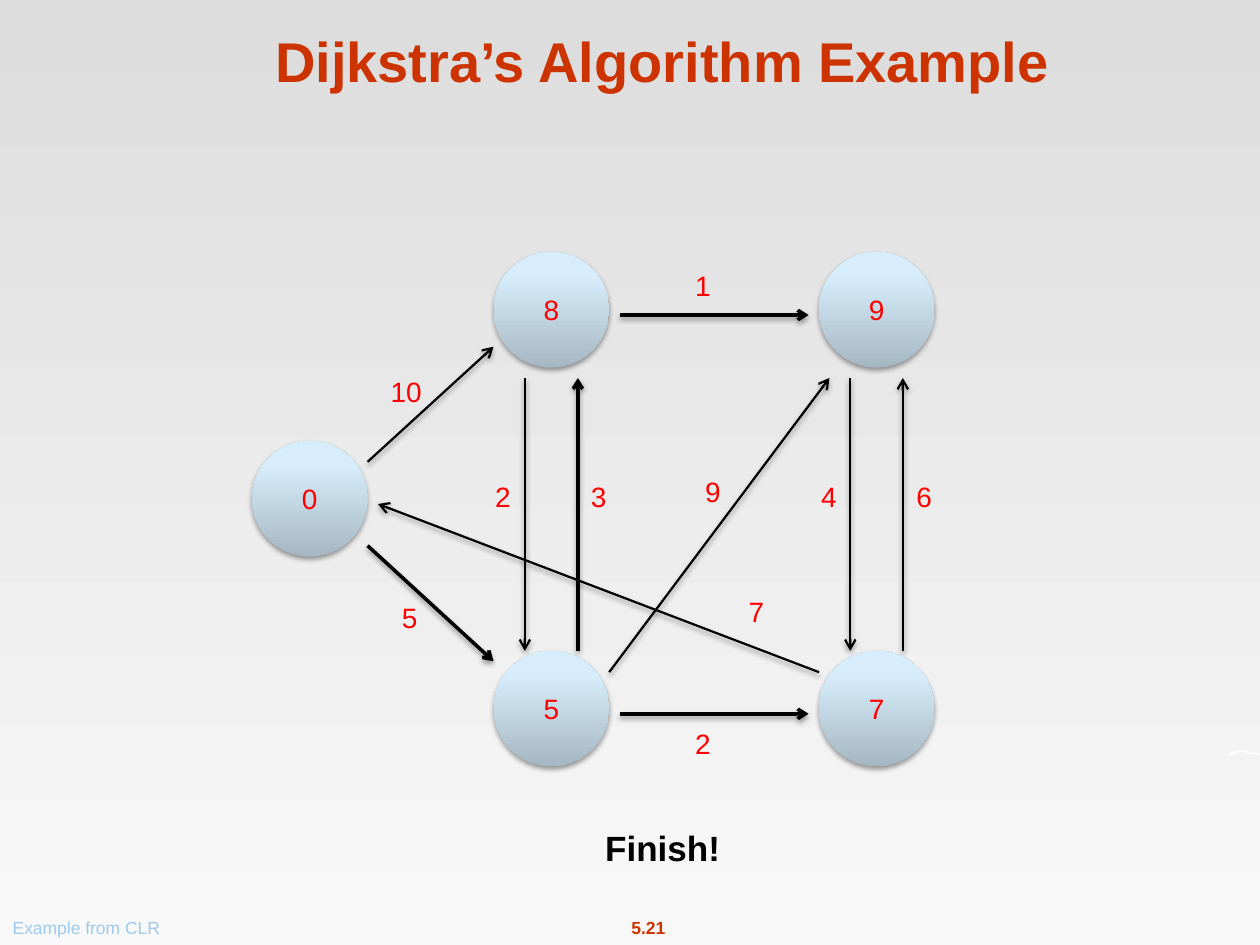
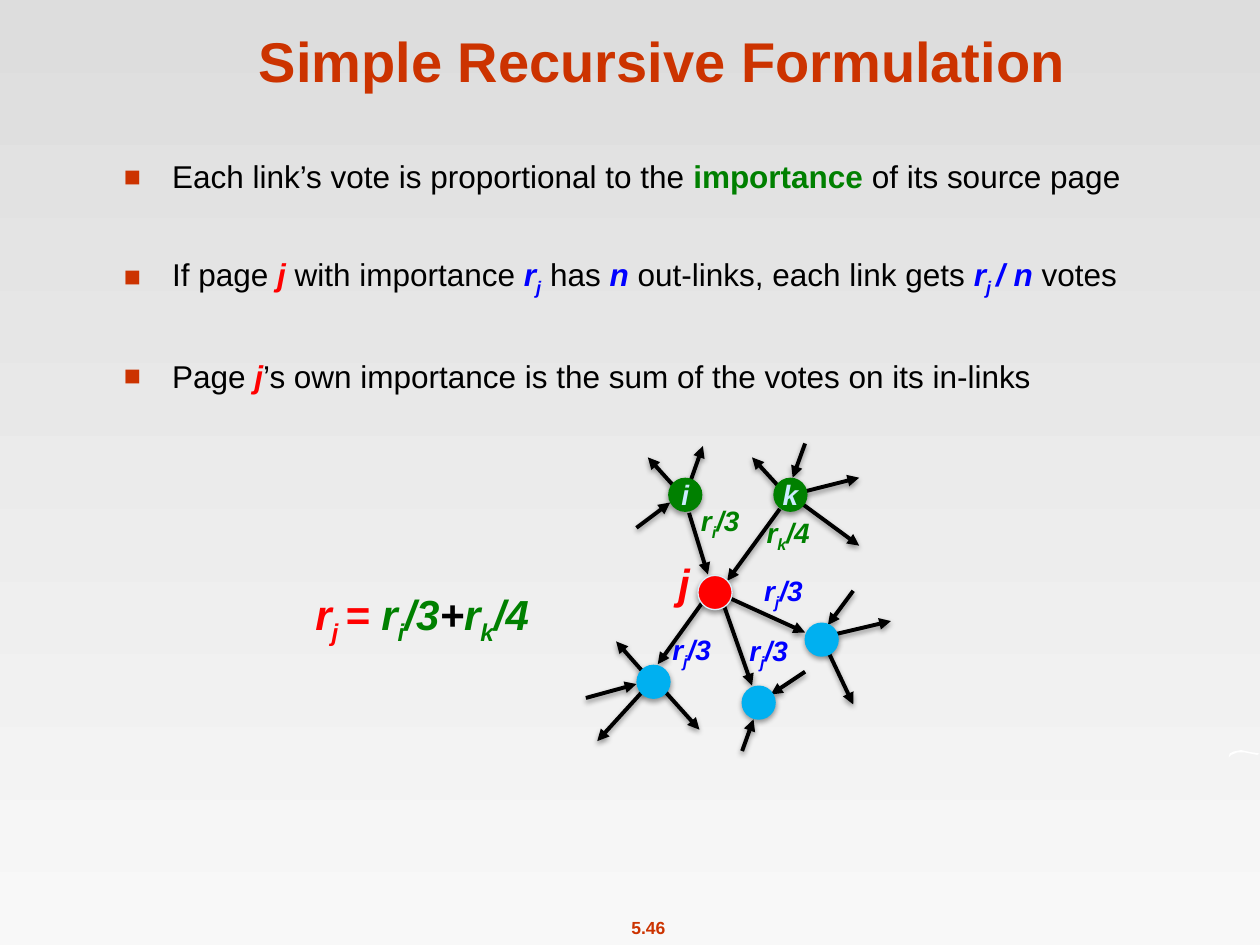
from lxml.etree import SubElement
from pptx import Presentation
from pptx.dml.color import RGBColor
from pptx.enum.shapes import MSO_CONNECTOR, MSO_SHAPE
from pptx.enum.text import MSO_ANCHOR, PP_ALIGN
from pptx.oxml import parse_xml
from pptx.oxml.ns import nsdecls, qn
from pptx.util import Cm, Pt

FONT = "Arial"
ORANGE, RED, GREEN, BLUE = "CC3300", "FF0000", "008000", "0000FF"
BLACK, WHITE, SKY, PALE, CREDIT = "000000", "FFFFFF", "00B0F0", "CCECFF", "9CCBEB"
NODE_SHADES = ("A5B7C2", "D7EDFB")
SHADOW = (
    f'<a:effectLst {nsdecls("a")}><a:outerShdw blurRad="39370" dist="20320" '
    'dir="5400000" rotWithShape="0"><a:srgbClr val="000000">'
    '<a:alpha val="38000"/></a:srgbClr></a:outerShdw></a:effectLst>'
)
WAVE = [(24.77, 15.27), (24.79, 15.19), (24.87, 15.15), (25.02, 15.12),
        (25.2, 15.16), (25.39, 15.19), (25.35, 15.22), (25.2, 15.19),
        (25.1, 15.17), (24.94, 15.17), (24.82, 15.22)]


def rgb(value):
    return RGBColor.from_string(value)


def write_runs(paragraph, size, runs):
    """Add (text, colour, marks) runs; marks are b bold, i italic, _ subscript."""
    for text, colour, marks in runs:
        run = paragraph.add_run()
        run.text = text
        format_values = {"name": FONT, "size": Pt(size),
                         "bold": "b" in marks, "italic": "i" in marks}
        for name, value in format_values.items():
            setattr(run.font, name, value)
        run.font.color.rgb = rgb(colour)
        if "_" in marks:
            run.font._element.set("baseline", "-25000")


# Shortest paths: left, top, fill, line, letter, letter colour, letter marks
path_nodes = [(left, top, NODE_SHADES, None, distance, RED, "")
              for left, top, distance in [
                  (5.08, 8.89, "0"), (9.95, 5.08, "8"), (9.95, 13.12, "5"),
                  (16.51, 5.08, "9"), (16.51, 13.12, "7")]]
path_edges = {
    2: [(7.41, 11, 9.95, 13.33), (12.49, 14.39, 16.3, 14.39),
        (12.49, 6.35, 16.3, 6.35), (11.65, 13.12, 11.65, 7.62)],
    1.25: [(7.41, 9.31, 9.95, 6.99), (12.28, 13.55, 16.72, 7.62),
           (16.51, 13.55, 7.62, 10.16), (10.58, 7.62, 10.58, 13.12),
           (18.2, 13.12, 18.2, 7.62), (17.14, 7.62, 17.14, 13.12)],
}
# Texts: left, top, width, height, size, runs
path_texts = [(left, top, 1.14, 0.94, 16, [(weight, RED, "")])
              for left, top, weight in [
                  (7.62, 7.42, "10"), (7.69, 11.96, "5"), (9.57, 9.52, "2"),
                  (11.5, 9.52, "3"), (13.6, 14.5, "2"), (13.6, 5.28, "1"),
                  (13.8, 9.42, "9"), (14.68, 11.85, "7"),
                  (16.14, 9.52, "4"), (18.06, 9.52, "6")]]
path_texts += [
    (11.94, 16.52, 2.84, 1.12, 20, [("Finish!", BLACK, "b")]),
    (0, 18.34, 3.48, 0.69, 10, [("Example from CLR", CREDIT, "")]),
]

# Page votes
vote_nodes = [
    (14.07, 11.6, RED, "DCEFFA", "", WHITE, ""),
    (15.59, 9.63, GREEN, None, "k", PALE, "bi"),
    (13.47, 9.63, GREEN, None, "i", PALE, "bi"),
]
vote_nodes += [(left, top, SKY, None, "", WHITE, "")
               for left, top in [(12.83, 13.4), (16.22, 12.55), (14.95, 13.82)]]
vote_edges = {2.25: [
    (14.33, 11.91, 13.26, 13.39), (14.45, 11.94, 16.23, 12.75),
    (14.5, 11.94, 15.16, 13.82), (13.89, 10.34, 14.27, 11.58),
    (15.72, 10.26, 14.66, 11.71), (15.93, 9.98, 17.32, 11),
    (15.93, 9.98, 17.32, 9.63), (15.93, 10.06, 15.16, 9.22),
    (13.82, 9.98, 14.17, 8.99), (13.82, 10.06, 13.06, 9.22),
    (16.56, 12.85, 17.2, 14.2), (16.56, 12.85, 17.96, 12.52),
    (13.18, 13.69, 12.04, 14.94), (13.18, 13.69, 14.1, 14.71),
    (13.18, 13.79, 12.42, 12.93), (17.2, 11.91, 16.69, 12.6),
    (16.23, 8.94, 15.98, 9.63), (16.23, 13.54, 15.54, 14),
    (11.81, 14.07, 12.83, 13.79), (14.96, 15.14, 15.19, 14.5),
    (12.83, 10.64, 13.51, 10.13),
]}
vote_texts = [
    (left, top, width, 1.02, 16,
     [("r", colour, "bi"), (page, colour, "bi_"), (share, colour, "bi")])
    for left, top, width, page, share, colour in [
        (15.12, 11.43, 1.35, "j", "/3", BLUE), (14.82, 12.65, 1.35, "j", "/3", BLUE),
        (13.27, 12.62, 1.35, "j", "/3", BLUE), (13.81, 10.03, 1.42, "i", "/3", GREEN),
        (15.13, 10.26, 1.52, "k", "/4", GREEN)]]
vote_texts += [
    (13.41, 11.09, 0.76, 1.3, 24, [("j", RED, "bi")]),
    (6.02, 11.85, 4.98, 1.3, 24, [
        ("r", RED, "bi"), ("j ", RED, "bi_"), ("= ", RED, "bi"),
        ("r", GREEN, "bi"), ("i", GREEN, "bi_"), ("/3", GREEN, "bi"),
        ("+", BLACK, "bi"),
        ("r", GREEN, "bi"), ("k", GREEN, "bi_"), ("/4", GREEN, "bi")]),
]
vote_bullets = [
    [("Each link’s vote is proportional to the ", BLACK, ""),
     ("importance ", GREEN, "b"), ("of its source page", BLACK, "")],
    [("If page ", BLACK, ""), ("j", RED, "bi"), (" with importance ", BLACK, ""),
     ("r", BLUE, "bi"), ("j", BLUE, "bi_"), (" has ", BLACK, ""),
     ("n", BLUE, "bi"), (" out-links, each link gets ", BLACK, ""),
     ("r", BLUE, "bi"), ("j ", BLUE, "bi_"), ("/ n", BLUE, "bi"),
     (" votes", BLACK, "")],
    [("Page ", BLACK, ""), ("j", RED, "bi"),
     ("’s own importance is the sum of the votes on its in-links", BLACK, "")],
]

# Title, page number, node size, arrowhead, edges, nodes, texts, bullets
pages = [
    ("Dijkstra’s Algorithm Example", "5.21", 2.33, "arrow",
     path_edges, path_nodes, path_texts, []),
    ("Simple Recursive Formulation", "5.46", 0.69, "triangle",
     vote_edges, vote_nodes, vote_texts, vote_bullets),
]

presentation = Presentation()
presentation.slide_width, presentation.slide_height = Cm(25.4), Cm(19.05)
background = presentation.slide_master.background.fill
background.gradient()
background.gradient_angle = 270
for stop, shade in zip(background.gradient_stops, ("DDDDDD", "F8F8F8")):
    stop.color.rgb = rgb(shade)

for title, number, node_size, arrowhead, edges, nodes, texts, bullets in pages:
    slide = presentation.slides.add_slide(presentation.slide_layouts[6])
    shapes = slide.shapes

    points = [(Cm(x), Cm(y)) for x, y in WAVE]
    builder = shapes.build_freeform(*points[0])
    builder.add_line_segments(points[1:], close=True)
    wave = builder.convert_to_shape()
    wave.shadow.inherit = False
    wave.fill.solid()
    wave.fill.fore_color.rgb = rgb(WHITE)
    wave.line.fill.background()

    if bullets:
        body = shapes.add_textbox(Cm(2.25), Cm(3.05), Cm(21.29), Cm(6))
        body.text_frame.word_wrap = True
    for index, runs in enumerate(bullets):
        frame = body.text_frame
        paragraph = frame.add_paragraph() if index else frame.paragraphs[0]
        paragraph.space_before = Pt(34 if index else 0)
        properties = paragraph._p.get_or_add_pPr()
        properties.set("marL", str(Cm(0.97)))
        properties.set("indent", str(-Cm(0.97)))
        bullet_colour = SubElement(properties, qn("a:buClr"))
        SubElement(bullet_colour, qn("a:srgbClr"), val=ORANGE)
        SubElement(properties, qn("a:buSzPct"), val="90000")
        SubElement(properties, qn("a:buFont"), typeface=FONT)
        SubElement(properties, qn("a:buChar"), char="■")
        write_runs(paragraph, 18, runs)

    for width, ends in edges.items():
        for end_points in ends:
            edge = shapes.add_connector(MSO_CONNECTOR.STRAIGHT,
                                        *[Cm(value) for value in end_points])
            edge.line.width = Pt(width)
            edge.line.color.rgb = rgb(BLACK)
            properties = edge._element.spPr
            SubElement(properties.find(qn("a:ln")), qn("a:tailEnd"), type=arrowhead)
            properties.append(parse_xml(SHADOW))

    for left, top, fill, outline, letter, colour, marks in nodes:
        node = shapes.add_shape(MSO_SHAPE.OVAL, Cm(left), Cm(top),
                                Cm(node_size), Cm(node_size))
        if fill == NODE_SHADES:
            node.fill.gradient()
            node.fill.gradient_angle = 90
            for stop, shade, position in zip(node.fill.gradient_stops, fill, (0, 0.8)):
                stop.color.rgb = rgb(shade)
                stop.position = position
        else:
            node.fill.solid()
            node.fill.fore_color.rgb = rgb(fill)
        if outline:
            node.line.color.rgb = rgb(outline)
            node.line.width = Pt(0.75)
        else:
            node.line.fill.background()
        node._element.spPr.append(parse_xml(SHADOW))
        if letter:
            frame = node.text_frame
            frame_values = {"margin_left": 0, "margin_right": 0, "word_wrap": False,
                            "vertical_anchor": MSO_ANCHOR.MIDDLE}
            for name, value in frame_values.items():
                setattr(frame, name, value)
            frame.paragraphs[0].alignment = PP_ALIGN.CENTER
            write_runs(frame.paragraphs[0], 16, [(letter, colour, marks)])

    shared_texts = [
        (2.14, 0.31, 22.43, 1.7, 32, [(title, ORANGE, "b")]),
        (12.45, 18.34, 1.24, 0.69, 10, [(number, ORANGE, "b")]),
    ]
    for left, top, width, height, size, runs in shared_texts + texts:
        box = shapes.add_textbox(Cm(left), Cm(top), Cm(width), Cm(height))
        box.text_frame.word_wrap = False
        box.text_frame.vertical_anchor = MSO_ANCHOR.BOTTOM
        paragraph = box.text_frame.paragraphs[0]
        paragraph.alignment = PP_ALIGN.CENTER
        write_runs(paragraph, size, runs)

presentation.save("out.pptx")
